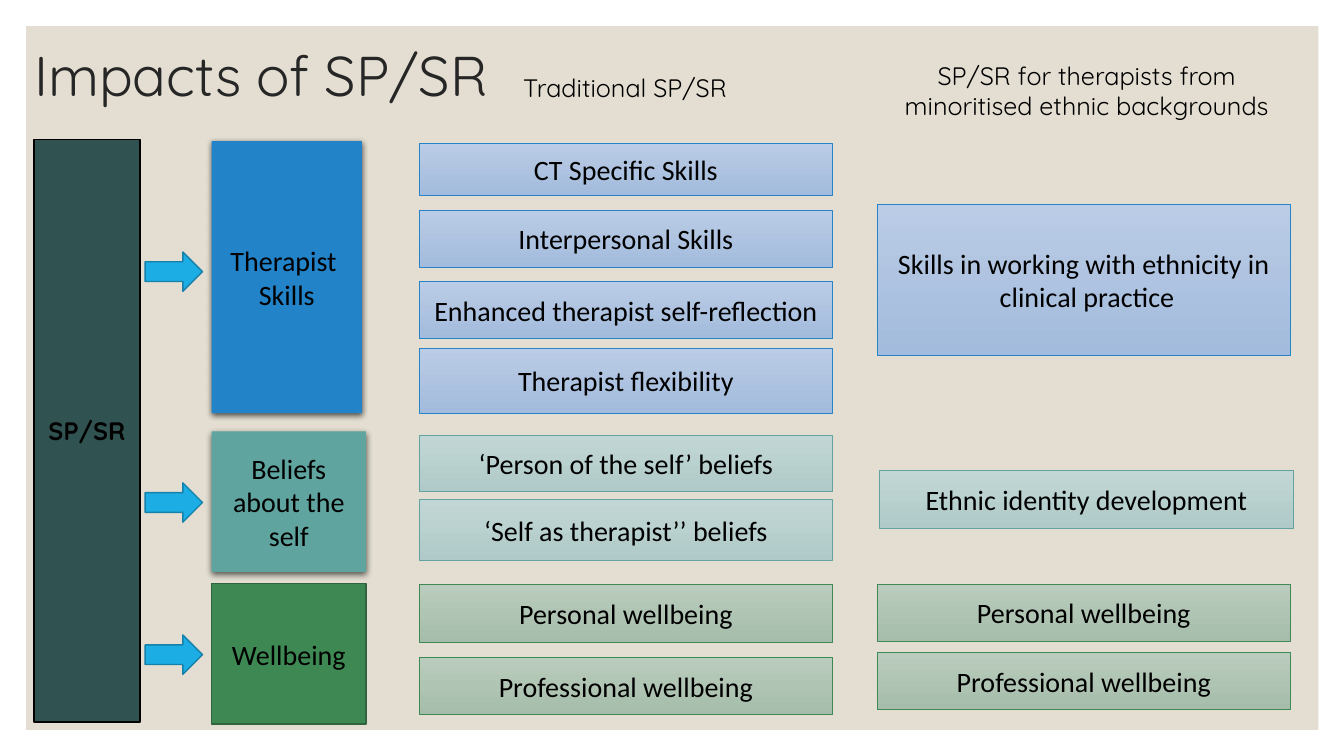
from lxml import etree
from pptx import Presentation
from pptx.dml.color import RGBColor
from pptx.enum.shapes import MSO_SHAPE
from pptx.enum.text import MSO_ANCHOR, PP_ALIGN
from pptx.oxml import parse_xml
from pptx.util import Pt

COLORS = {
    "panel": "E3DED1", "black": "000000", "title": "262626",
    "source": "305250", "arrow": "1CADE4", "arrow_line": "1580A9",
    "skills": "2283C9", "skills_line": "2683C6",
    "skills_top": "BACCE6", "skills_bottom": "A3BBDC",
    "beliefs": "60A4A0", "beliefs_line": "62A39F",
    "beliefs_top": "C2D7D5", "beliefs_bottom": "AFCAC8",
    "wellbeing": "3E8853", "wellbeing_line": "3E8853", "wellbeing_edge": "2E653D",
    "wellbeing_top": "BACCBD", "wellbeing_bottom": "A6BDAB",
}
SHADOW = (
    '<a:outerShdw xmlns:a="http://schemas.openxmlformats.org/drawingml/2006/main" '
    'blurRad="57150" dist="19050" dir="5400000" algn="ctr" rotWithShape="0">'
    '<a:srgbClr val="000000"><a:alpha val="63000"/></a:srgbClr></a:outerShdw>'
)


def write(sp, lines, size, font="Calibri", color="black", bold=False,
          align=PP_ALIGN.CENTER, wrap=True):
    tf = sp.text_frame
    tf.word_wrap = wrap
    for i, line in enumerate(lines):
        p = tf.add_paragraph() if i else tf.paragraphs[0]
        p.alignment = align
        r = p.add_run()
        r.text = line
        r.font.name = font
        r.font.size = Pt(size)
        r.font.bold = bold
        r.font.color.rgb = RGBColor.from_string(COLORS[color])


def add_block(box, fill, line=None, line_width=1, kind=MSO_SHAPE.RECTANGLE):
    """Add a preset shape; a pair of fill names gives a top-to-bottom gradient."""
    sp = s.shapes.add_shape(kind, *(Pt(v) for v in box))
    sp.shadow.inherit = False
    if isinstance(fill, tuple):
        sp.fill.gradient()
        sp.fill.gradient_angle = 270
        for stop, name in zip(sp.fill.gradient_stops, fill):
            stop.color.rgb = RGBColor.from_string(COLORS[name])
    else:
        sp.fill.solid()
        sp.fill.fore_color.rgb = RGBColor.from_string(COLORS[fill])
    if line:
        sp.line.color.rgb = RGBColor.from_string(COLORS[line])
        sp.line.width = Pt(line_width)
    else:
        sp.line.fill.background()
    return sp


prs = Presentation()
prs.slide_width, prs.slide_height = Pt(960), Pt(540)
s = prs.slides.add_slide(prs.slide_layouts[6])

add_block((18.7, 18.7, 923, 502.6), "panel")

# Title and column headings
title = s.shapes.add_textbox(Pt(17.3), Pt(2.2), Pt(792), Pt(108))
title.text_frame.vertical_anchor = MSO_ANCHOR.MIDDLE
write(title, ["Impacts of SP/SR"], 40, "Quicksand", "title", align=PP_ALIGN.LEFT)
title.text_frame.paragraphs[0].line_spacing = 0.9

headings = [
    (306.7, 48.2, 29, "Traditional SP/SR"),
    (636.5, 39.6, 72.7, "SP/SR for therapists from minoritised ethnic backgrounds"),
]
for left, top, height, text in headings:
    heading = s.shapes.add_textbox(Pt(left), Pt(top), Pt(279.4), Pt(height))
    write(heading, [text], 18, "Quicksand")

# Source bar and the three areas it leads to
source = add_block((24.3, 99.5, 75.6, 416.2), "source", "black")
write(source, ["SP/SR"], 18, "Quicksand", bold=True)

areas = [
    ("skills", 100.8, 107.3, 194.4, ["Therapist ", "Skills"], None, 180),
    ("beliefs", 308.2, 110.2, 100.4, ["Beliefs about the self"], None, 344.9),
    ("wellbeing", 416.9, 110.2, 100.4, ["Wellbeing"], "wellbeing_edge", 453.6),
]
for area, top, width, height, lines, edge, arrow_top in areas:
    sp = add_block((151.2, top, width, height), area, edge)
    if not edge:
        effects = sp._element.spPr.find("{*}effectLst")
        effects.append(parse_xml(SHADOW))
    write(sp, lines, 20, wrap=area != "skills")
    add_block((103.7, arrow_top, 41, 28.1), "arrow", "arrow_line",
              kind=MSO_SHAPE.RIGHT_ARROW)

# Impacts: area, left, top, height, lines
TRADITIONAL, ETHNIC = 299.5, 626.6
impacts = [
    ("skills", TRADITIONAL, 102.2, 37.4, ["CT Specific Skills"]),
    ("skills", TRADITIONAL, 150, 41, ["Interpersonal Skills"]),
    ("skills", TRADITIONAL, 200.9, 41, ["Enhanced therapist self-reflection"]),
    ("skills", TRADITIONAL, 248.6, 46.6, ["Therapist flexibility"]),
    ("beliefs", TRADITIONAL, 310.9, 40.1, ["‘Person of the self’ beliefs"]),
    ("beliefs", TRADITIONAL, 356.9, 43.4, ["‘Self as therapist’’ beliefs"]),
    ("wellbeing", TRADITIONAL, 417.6, 41, ["Personal wellbeing"]),
    ("wellbeing", TRADITIONAL, 469.4, 41, ["Professional wellbeing"]),
    ("skills", ETHNIC, 145.8, 108,
     ["Skills in working with ethnicity in", " clinical practice"]),
    ("beliefs", ETHNIC + 1.8, 336.2, 41, ["Ethnic identity development"]),
    ("wellbeing", ETHNIC, 417.2, 41, ["Personal wellbeing"]),
    ("wellbeing", ETHNIC, 466, 41, ["Professional wellbeing"]),
]
for area, left, top, height, lines in impacts:
    sp = add_block((left, top, 295.2, height), (f"{area}_top", f"{area}_bottom"),
                   f"{area}_line", 0.5)
    write(sp, lines, 20, wrap=False)

prs.save("out.pptx")
